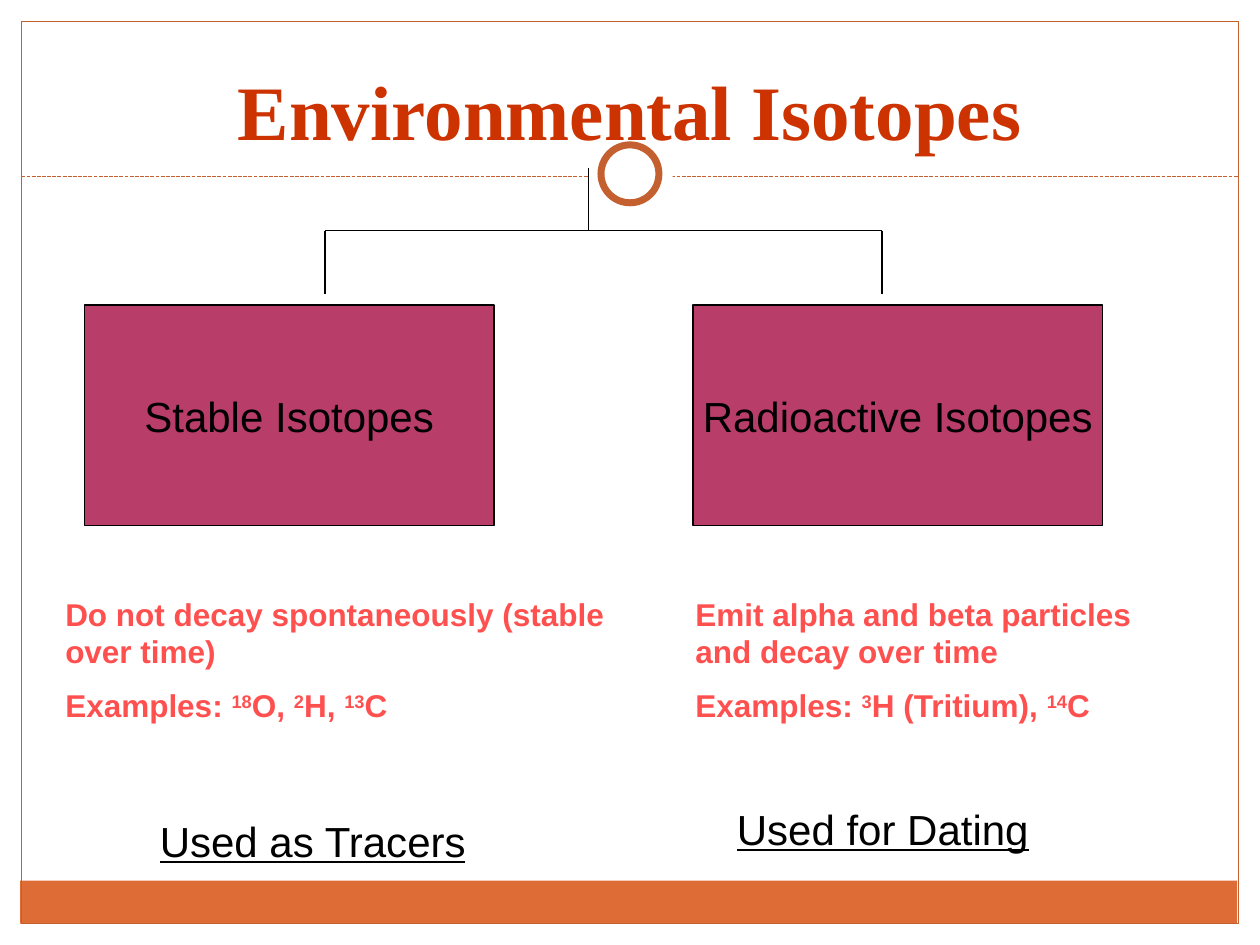
from pptx import Presentation
from pptx.dml.color import RGBColor
from pptx.enum.dml import MSO_LINE
from pptx.enum.shapes import MSO_CONNECTOR, MSO_SHAPE
from pptx.enum.text import MSO_ANCHOR as Anchor, MSO_AUTO_SIZE as AutoSize, PP_ALIGN as Align
from pptx.oxml.ns import qn
from pptx.util import Inches, Pt

WHITE = RGBColor(0xFF, 0xFF, 0xFF)
BLACK = RGBColor(0x00, 0x00, 0x00)
ORANGE = RGBColor(0xDE, 0x6C, 0x36)
RUST = RGBColor(0xC4, 0x5F, 0x30)
RED = RGBColor(0xCC, 0x33, 0x00)
CORAL = RGBColor(0xFF, 0x50, 0x50)
BERRY = RGBColor(0xB8, 0x3D, 0x68)


class SlideBuilder:
    """Holds the text style and the current slide, and adds each kind of element."""

    font = "Arial"
    title_font = "Times New Roman"

    def __init__(self, page):
        self.page = page

    def style(self, span, size, color, bold=False, underline=False, font=None):
        span.font.name = font or self.font
        span.font.size = Pt(size)
        span.font.color.rgb = color
        span.font.bold = bold
        span.font.underline = underline

    def title(self, text, left, top, width, height):
        box = self.page.shapes.title
        box.left, box.top, box.width, box.height = map(Inches, (left, top, width, height))
        frame = box.text_frame
        frame.text = text
        frame.auto_size = AutoSize.NONE
        frame.vertical_anchor = Anchor.MIDDLE
        para = frame.paragraphs[0]
        para.alignment = Align.CENTER
        para.line_spacing = 0.85
        self.style(para.runs[0], 44, RED, bold=True, font=self.title_font)
        self.page.shapes._spTree.append(box._element)

    def shape(self, kind, left, top, width, height, fill=None, line=None, weight=0.75):
        shape = self.page.shapes.add_shape(kind, *map(Inches, (left, top, width, height)))
        shape.shadow.inherit = False
        if fill is None:
            shape.fill.background()
        else:
            shape.fill.solid()
            shape.fill.fore_color.rgb = fill
        if line is None:
            shape.line.fill.background()
        else:
            shape.line.color.rgb = line
            shape.line.width = Pt(weight)
        return shape

    def isotope_box(self, text, left):
        box = self.shape(MSO_SHAPE.RECTANGLE, left, 2.42, 3.25, 1.75, BERRY, BLACK)
        frame = box.text_frame
        frame.text = text
        frame.word_wrap = False
        frame.vertical_anchor = Anchor.MIDDLE
        para = frame.paragraphs[0]
        para.alignment = Align.CENTER
        self.style(para.runs[0], 24, BLACK)

    def line(self, start, end, color=BLACK, dash=None):
        line = self.page.shapes.add_connector(
            MSO_CONNECTOR.STRAIGHT, *map(Inches, (*start, *end)))
        line.line.color.rgb = color
        line.line.width = Pt(0.75)
        if dash is not None:
            line.line.dash_style = dash
        properties = line._element.spPr
        properties.append(properties.makeelement(qn("a:effectLst"), {}))

    def text(self, paragraphs, left, top, width, height, size, color, **look):
        """Adds a text box in which parts between carets are superscript."""
        box = self.page.shapes.add_textbox(*map(Inches, (left, top, width, height)))
        frame = box.text_frame
        frame.word_wrap = True
        frame.auto_size = AutoSize.SHAPE_TO_FIT_TEXT
        for index, content in enumerate(paragraphs):
            para = frame.add_paragraph() if index else frame.paragraphs[0]
            para.space_before = Pt(size / 2 if index else 0)
            for position, part in enumerate(content.split("^")):
                span = para.add_run()
                span.text = part
                self.style(span, size, color, **look)
                if position % 2:
                    span.font._element.set("baseline", "30000")


def main():
    deck = Presentation()
    deck.slide_width, deck.slide_height = Inches(10), Inches(7.5)
    slide = SlideBuilder(deck.slides.add_slide(deck.slide_layouts[5]))

    slide.shape(MSO_SHAPE.RECTANGLE, 0.16, 6.99, 9.66, 0.34, ORANGE)
    slide.shape(MSO_SHAPE.RECTANGLE, 0.17, 0.17, 9.66, 7.16, line=RUST)
    slide.line((0.17, 1.4), (9.83, 1.4), RUST, MSO_LINE.SQUARE_DOT)
    slide.shape(MSO_SHAPE.OVAL, 4.67, 1.05, 0.67, 0.67, WHITE)
    slide.shape(MSO_SHAPE.OVAL, 4.77, 1.15, 0.46, 0.46, WHITE, RUST, 4)
    slide.title("Environmental Isotopes", 0.5, 0.3, 9, 1.25)

    slide.isotope_box("Radioactive Isotopes", 5.5)
    slide.isotope_box("Stable Isotopes", 0.67)

    fork = (4.67, 1.83)
    slide.line((4.67, 1.33), fork)
    for branch in (7, 2.58):
        slide.line(fork, (branch, 1.83))
        slide.line((branch, 1.83), (branch, 2.33))

    slide.text(["Do not decay spontaneously (stable over time)",
                "Examples: ^18^O, ^2^H, ^13^C"],
               0.42, 4.67, 4.5, 1.15, 18, CORAL, bold=True)
    slide.text(["Emit alpha and beta particles and decay over time",
                "Examples: ^3^H (Tritium), ^14^C"],
               5.42, 4.67, 3.92, 1.15, 18, CORAL, bold=True)
    slide.text(["Used as Tracers"], 1.17, 6.42, 2.83, 0.5, 24, BLACK, underline=True)
    slide.text(["Used for Dating"], 5.75, 6.33, 3, 0.5, 24, BLACK, underline=True)

    deck.save("out.pptx")


if __name__ == "__main__":
    main()
